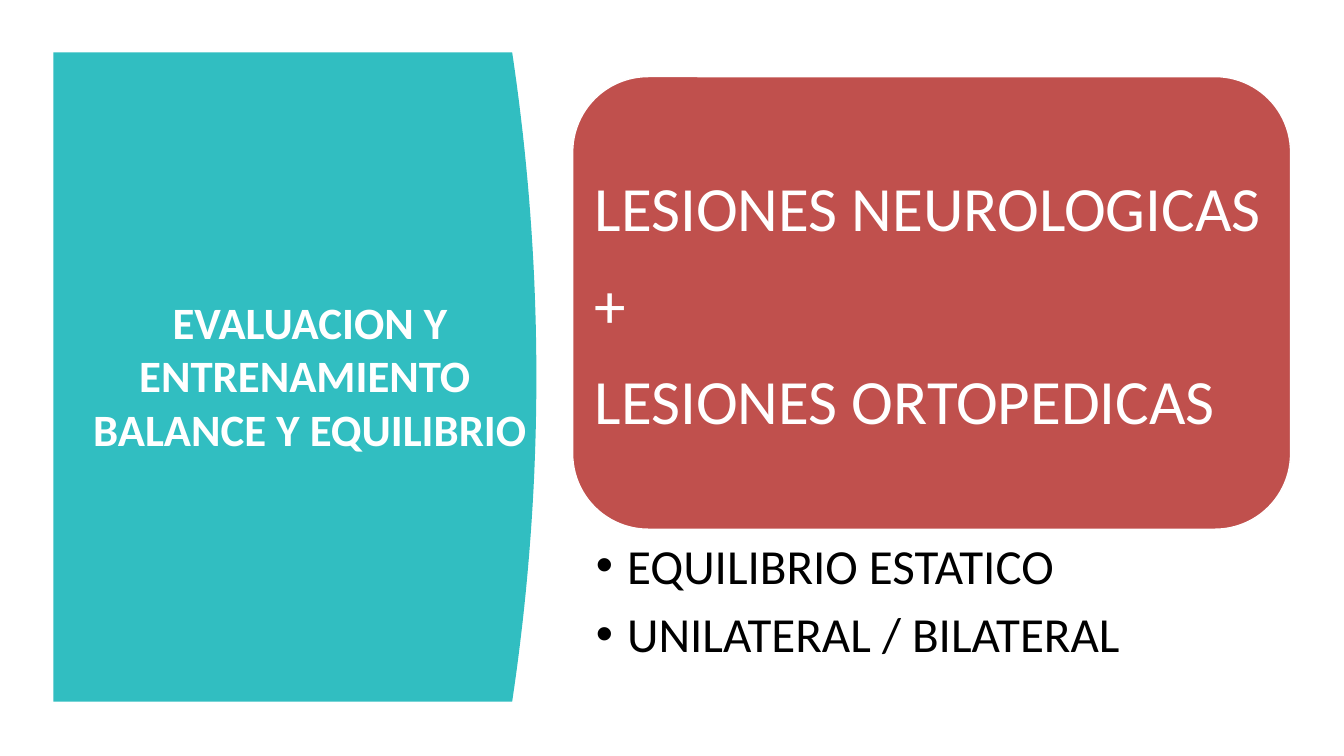
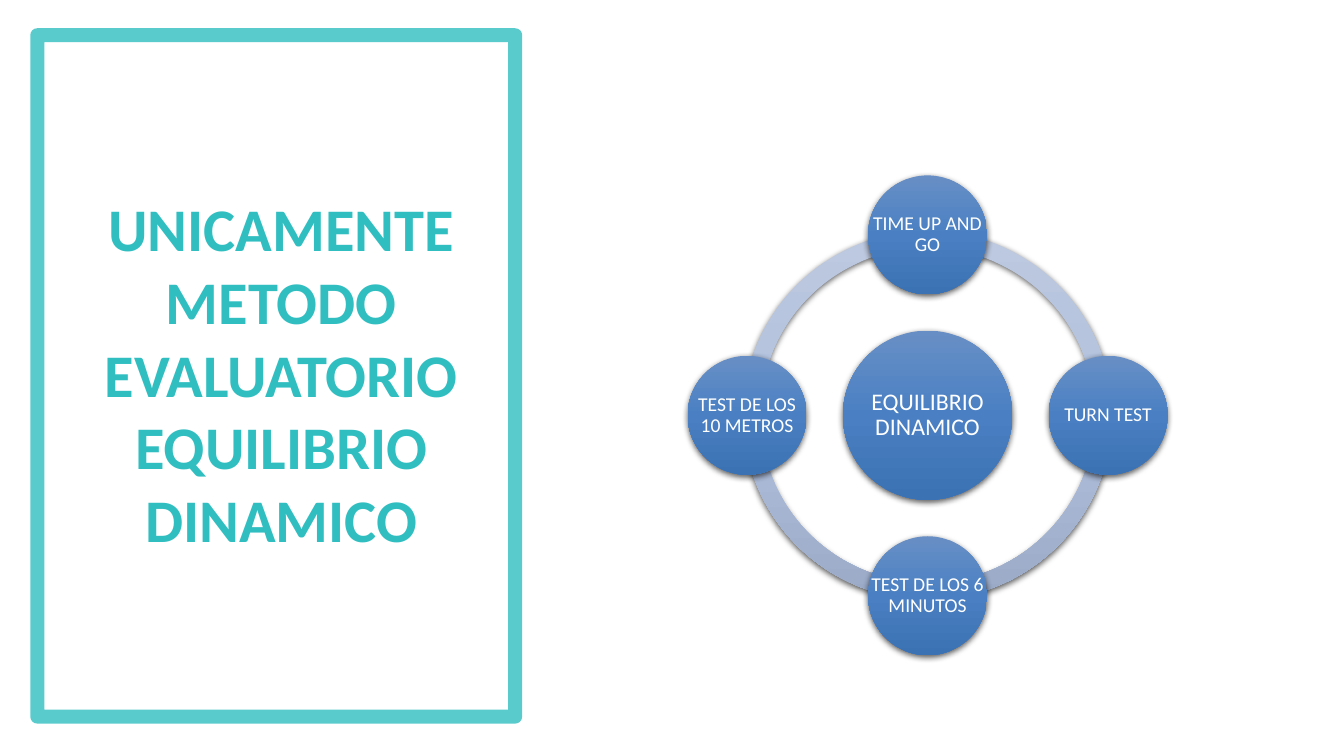
from copy import deepcopy
from math import cos, radians, sin

from lxml import etree
from pptx import Presentation
from pptx.dml.color import RGBColor
from pptx.enum import shapes as kinds, text as t
from pptx.oxml.ns import qn
from pptx.util import Inches, Pt

FONT = "Calibri"
TEAL = RGBColor(0x31, 0xBE, 0xC1)
RED = RGBColor(0xC0, 0x50, 0x4D)
WHITE = RGBColor(0xFF, 0xFF, 0xFF)
BLACK = RGBColor(0x00, 0x00, 0x00)
RING_COLORS = [RGBColor.from_string(c) for c in ("BDC9E0", "B1C0DD", "9AAAC7")]
NODE_COLORS = [RGBColor.from_string(c) for c in ("688FC5", "4A80C3", "3B72B3")]
CENTER_X, CENTER_Y = 9.2, 4.12
RING_SIZE, HUB_SIZE, NODE_SIZE, ORBIT = 3.66, 1.68, 1.18, 1.79
QUARTER_TURN = 54
TESTS = ["TIME UP AND\vGO", "TURN TEST", "TEST DE LOS 6\vMINUTOS", "TEST DE LOS\v10 METROS"]


def box(left, top, width, height):
    """Return a position and size in inches as lengths."""
    return [Inches(value) for value in (left, top, width, height)]


def square(x, y, size):
    """Return the box of a square around a centre."""
    return box(x - size / 2, y - size / 2, size, size)


def style_paragraph(paragraph, size, color, bold=False, align=t.PP_ALIGN.LEFT, after=0):
    """Format a whole paragraph."""
    paragraph.alignment = align
    paragraph.space_after = Pt(after)
    font = paragraph.font
    font.name, font.size, font.bold = FONT, Pt(size), bold
    font.color.rgb = color


def set_margins(frame, left=0, top=0, right=0, bottom=0):
    """Set the insets of a text frame in inches."""
    frame.margin_left, frame.margin_top, frame.margin_right, frame.margin_bottom = box(
        left, top, right, bottom)


def set_title(slide, text, bounds, size, color, anchor):
    """Place and format the title above the shapes drawn so far."""
    title = slide.shapes.title
    title.left, title.top, title.width, title.height = bounds
    frame = title.text_frame
    frame.text = text
    frame.auto_size = t.MSO_AUTO_SIZE.NONE
    frame.vertical_anchor = anchor
    style_paragraph(frame.paragraphs[0], size, color, True, t.PP_ALIGN.CENTER)
    slide.shapes._spTree.append(title._element)


def add_shape(slide, kind, bounds):
    """Add a preset shape without line or shadow."""
    shape = slide.shapes.add_shape(kind, *bounds)
    shape.shadow.inherit = False
    shape.line.fill.background()
    return shape


def set_opacity(fill_element, percent):
    """Make a solid colour partly transparent."""
    color = fill_element.find(f".//{qn('a:srgbClr')}")
    etree.SubElement(color, qn("a:alpha"), val=str(percent * 1000))


def add_shaded_shape(slide, kind, bounds, colors):
    """Add a shape with a three-stop vertical gradient and a soft shadow."""
    shape = add_shape(slide, kind, bounds)
    shape.fill.gradient()
    shape.fill.gradient_angle = 270
    properties = shape._element.spPr
    stop_list = properties.find(f".//{qn('a:gsLst')}")
    stop_list.append(deepcopy(stop_list[-1]))
    for stop, position, color in zip(shape.fill.gradient_stops, (0, 0.5, 1), colors):
        stop.position = position
        stop.color.rgb = color
    shadow = etree.SubElement(
        properties.find(qn("a:effectLst")), qn("a:outerShdw"),
        blurRad=str(Pt(4.5)), dist=str(Pt(1.5)), dir="5400000", rotWithShape="0")
    color = etree.SubElement(shadow, qn("a:srgbClr"), val="000000")
    etree.SubElement(color, qn("a:alpha"), val="63000")
    return shape


def add_curved_panel(slide, left, top, right, bottom, bulge):
    """Add a teal panel whose right side bows outwards."""
    steps = 40
    edge = []
    for step in range(steps + 1):
        offset = 2 * step / steps - 1
        edge.append((right + bulge * (1 - offset ** 2), top + (bottom - top) * step / steps))
    builder = slide.shapes.build_freeform(Inches(left), Inches(top))
    builder.add_line_segments([(Inches(x), Inches(y)) for x, y in edge + [(left, bottom)]])
    panel = builder.convert_to_shape()
    panel.shadow.inherit = False
    panel.fill.solid()
    panel.fill.fore_color.rgb = TEAL
    panel.line.fill.background()


def add_injury_card(slide, lines):
    """Add the red rounded card with its lines of text."""
    card = add_shape(slide, kinds.MSO_SHAPE.ROUNDED_RECTANGLE, box(5.68, 0.76, 7.12, 4.49))
    card.fill.solid()
    card.fill.fore_color.rgb = RED
    card.line.color.rgb = WHITE
    card.line.width = Pt(1)
    frame = card.text_frame
    set_margins(frame)
    frame.text = "\n".join(lines)
    for paragraph in frame.paragraphs:
        style_paragraph(paragraph, 45, WHITE, after=15)


def add_bullets(slide, lines):
    """Add the bulleted list below the card."""
    frame = slide.shapes.add_textbox(*box(5.68, 5.25, 7.12, 1.45)).text_frame
    frame.word_wrap = True
    set_margins(frame, 0.23, 0.06, 0.35, 0.06)
    frame.text = "\n".join(lines)
    for paragraph in frame.paragraphs:
        properties = paragraph._p.get_or_add_pPr()
        properties.set("marL", str(Inches(0.31)))
        properties.set("indent", str(-Inches(0.31)))
        etree.SubElement(properties, qn("a:buFont"), typeface="Arial")
        etree.SubElement(properties, qn("a:buChar"), char="•")
        style_paragraph(paragraph, 35, BLACK, after=7)


def add_frame(slide):
    """Add the thick teal frame around the title."""
    frame = add_shape(slide, kinds.MSO_SHAPE.RECTANGLE, box(0.37, 0.35, 4.74, 6.76))
    frame.fill.solid()
    frame.fill.fore_color.rgb = WHITE
    set_opacity(frame._element.spPr.find(qn("a:solidFill")), 90)
    frame.line.color.rgb = TEAL
    frame.line.width = Pt(10)
    set_opacity(frame._element.spPr.find(qn("a:ln")), 80)


def add_ring(slide):
    """Add the four quarter arcs of the ring."""
    for quarter in (2, 1, 0, 3):
        arc = add_shaded_shape(slide, kinds.MSO_SHAPE.BLOCK_ARC,
                               square(CENTER_X, CENTER_Y, RING_SIZE), RING_COLORS)
        arc.adjustments[0] = quarter * QUARTER_TURN
        arc.adjustments[1] = (quarter + 1) % 4 * QUARTER_TURN
        arc.adjustments[2] = 0.046


def add_node(slide, text, x, y, diameter, size):
    """Add a labelled circle around a centre."""
    node = add_shaded_shape(slide, kinds.MSO_SHAPE.OVAL, square(x, y, diameter), NODE_COLORS)
    frame = node.text_frame
    frame.word_wrap = False
    set_margins(frame)
    frame.text = text
    paragraph = frame.paragraphs[0]
    paragraph.line_spacing = 0.9
    style_paragraph(paragraph, size, WHITE, align=t.PP_ALIGN.CENTER)


def build_injuries_slide(slide):
    """Build the slide on balance assessment and training."""
    add_curved_panel(slide, 0.53, 0.52, 5.08, 6.96, 0.24)
    set_title(slide, "EVALUACION Y ENTRENAMIENTO \vBALANCE Y EQUILIBRIO",
              box(0.5, 1.09, 5.15, 5.26), 32, WHITE, t.MSO_ANCHOR.MIDDLE)
    add_injury_card(slide, ["LESIONES NEUROLOGICAS", "+", "LESIONES ORTOPEDICAS"])
    add_bullets(slide, ["EQUILIBRIO ESTATICO", "UNILATERAL / BILATERAL"])


def build_tests_slide(slide):
    """Build the slide on dynamic balance tests."""
    add_frame(slide)
    set_title(slide, "UNICAMENTE METODO EVALUATORIO EQUILIBRIO DINAMICO",
              box(0.5, 2.39, 4.58, 3.16), 43.2, TEAL, t.MSO_ANCHOR.BOTTOM)
    add_ring(slide)
    add_node(slide, "EQUILIBRIO\vDINAMICO", CENTER_X, CENTER_Y, HUB_SIZE, 17)
    for index, test in enumerate(TESTS):
        angle = radians(360 / len(TESTS) * index)
        add_node(slide, test, CENTER_X + ORBIT * sin(angle),
                 CENTER_Y - ORBIT * cos(angle), NODE_SIZE, 14)


def main():
    """Build and save the presentation."""
    presentation = Presentation()
    presentation.slide_width, presentation.slide_height = Inches(13.33), Inches(7.5)
    for build in (build_injuries_slide, build_tests_slide):
        build(presentation.slides.add_slide(presentation.slide_layouts[5]))
    presentation.save("out.pptx")


if __name__ == "__main__":
    main()
